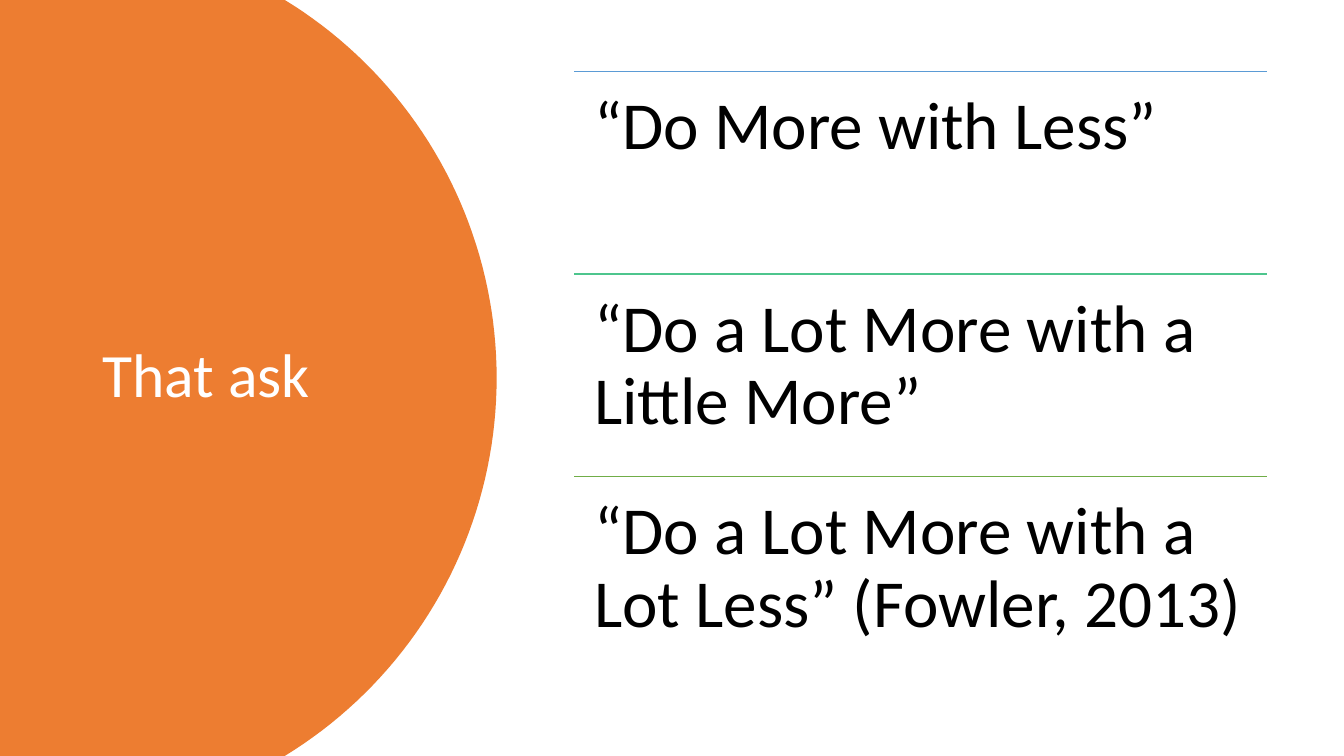
"""Build the slide "That ask": an orange disc with the title and three ruled quotes."""
from math import asin, cos, sin

from lxml.etree import SubElement
from pptx import Presentation
from pptx.dml.color import RGBColor
from pptx.enum.shapes import MSO_CONNECTOR
from pptx.enum.text import MSO_ANCHOR, MSO_AUTO_SIZE, PP_ALIGN
from pptx.oxml.ns import qn
from pptx.util import Pt

PX = 9525
WIDTH, HEIGHT = 1280, 720
ORANGE = RGBColor(0xED, 0x7D, 0x31)
BLUE = RGBColor(0x5B, 0x9B, 0xD5)
TEAL = RGBColor(0x4D, 0xC5, 0x8D)
GREEN = RGBColor(0x70, 0xAD, 0x47)
WHITE = RGBColor(0xFF, 0xFF, 0xFF)
BLACK = RGBColor(0x00, 0x00, 0x00)

DISC_X, DISC_Y, DISC_RADIUS, ARC_STEPS = 51, 360, 422, 80
QUOTE_LEFT, QUOTE_TOP, QUOTE_WIDTH, QUOTE_HEIGHT = 547, 68, 660, 193
QUOTE_INSET = 19
QUOTES = [
    ("“Do More with Less”", BLUE),
    ("“Do a Lot More with a Little More”", TEAL),
    ("“Do a Lot More with a Lot Less” (Fowler, 2013)", GREEN),
]


def place(shape, left, top, width, height):
    box = {"left": left, "top": top, "width": width, "height": height}
    for name, value in box.items():
        setattr(shape, name, value * PX)


def write(frame, text, size, color, anchor):
    frame_format = {"word_wrap": True, "auto_size": MSO_AUTO_SIZE.NONE,
                    "vertical_anchor": anchor, "text": text}
    for name, value in frame_format.items():
        setattr(frame, name, value)
    para = frame.paragraphs[0]
    para.alignment = PP_ALIGN.LEFT
    para.line_spacing = 0.9
    for name, value in {"name": "Calibri", "size": Pt(size)}.items():
        setattr(para.font, name, value)
    para.font.color.rgb = color


deck = Presentation()
deck.slide_width, deck.slide_height = WIDTH * PX, HEIGHT * PX
page = deck.slides.add_slide(deck.slide_layouts[5])

half_angle = asin(DISC_Y / DISC_RADIUS)
angles = [half_angle * (2 * step / ARC_STEPS - 1) for step in range(ARC_STEPS + 1)]
arc = [((DISC_X + DISC_RADIUS * cos(angle)) * PX,
        (DISC_Y + DISC_RADIUS * sin(angle)) * PX) for angle in angles]
builder = page.shapes.build_freeform(0, 0)
builder.add_line_segments(arc + [(0, HEIGHT * PX)], close=True)
disc = builder.convert_to_shape()
disc.shadow.inherit = False
disc.fill.solid()
disc.fill.fore_color.rgb = ORANGE
disc.line.fill.background()

title = page.shapes.title
disc.element.addnext(title.element)
place(title, 88, 67, 310, 585)
write(title.text_frame, "That ask", 44, WHITE, MSO_ANCHOR.MIDDLE)

for row, (quote, color) in enumerate(QUOTES):
    top = QUOTE_TOP + row * QUOTE_HEIGHT
    rule = page.shapes.add_connector(
        MSO_CONNECTOR.STRAIGHT, QUOTE_LEFT * PX, top * PX,
        (QUOTE_LEFT + QUOTE_WIDTH) * PX, top * PX)
    rule.line.color.rgb = color
    rule.line.width = Pt(1)
    SubElement(rule.element.spPr, qn("a:effectLst"))

    box = page.shapes.add_textbox(0, 0, PX, PX)
    place(box, QUOTE_LEFT, top, QUOTE_WIDTH, QUOTE_HEIGHT)
    for side in ("left", "top", "right", "bottom"):
        setattr(box.text_frame, f"margin_{side}", QUOTE_INSET * PX)
    write(box.text_frame, quote, 48, BLACK, MSO_ANCHOR.TOP)

deck.save("out.pptx")
